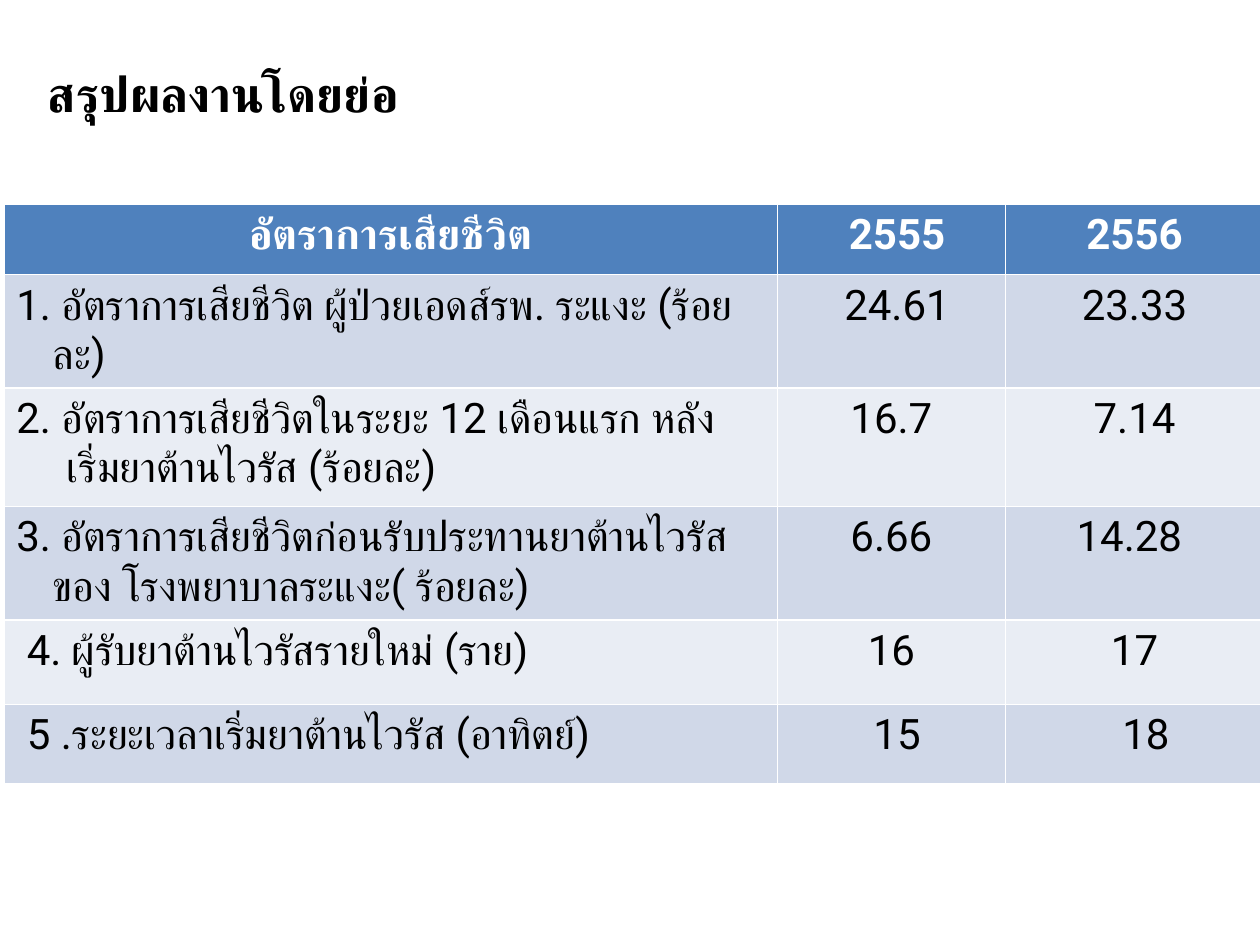
from dataclasses import dataclass

from lxml.etree import SubElement
from pptx import Presentation
from pptx.dml.color import RGBColor
from pptx.enum.text import MSO_ANCHOR, MSO_AUTO_SIZE, PP_ALIGN
from pptx.oxml.ns import qn
from pptx.util import Inches, Pt

COLORS = {
    "header": "4F81BD",
    "odd": "D0D8E8",
    "even": "E9EDF4",
    "light": "FFFFFF",
    "dark": "000000",
}
FONT = "Roboto"
COL_WIDTHS = (6.14, 1.81, 2.05)
MARGIN = 0.1


@dataclass
class Value:
    text: str
    shift: float = 0


@dataclass
class Row:
    label: str
    values: tuple[Value, Value]
    height: float
    hanging: float = 0.29


HEADER = Row("อัตราการเสียชีวิต", (Value("2555", 0.09), Value("2556")), 0.56, 0)
ROWS = (
    Row("1. อัตราการเสียชีวิต ผู้ป่วยเอดส์รพ. ระแงะ (ร้อยละ)",
        (Value("24.61", 0.09), Value("23.33")), 0.62),
    Row("2. อัตราการเสียชีวิตในระยะ 12 เดือนแรก หลังเริ่มยาต้านไวรัส (ร้อยละ)",
        (Value("16.7"), Value("7.14")), 0.94, 0.4),
    Row("3. อัตราการเสียชีวิตก่อนรับประทานยาต้านไวรัส ของ โรงพยาบาลระแงะ( ร้อยละ)",
        (Value("6.66"), Value("14.28 ")), 0.87),
    Row(" 4. ผู้รับยาต้านไวรัสรายใหม่ (ราย)", (Value("16"), Value("17")), 0.67),
    Row(" 5 .ระยะเวลาเริ่มยาต้านไวรัส (อาทิตย์)",
        (Value("15", 0.09), Value("18", 0.18)), 0.63),
)


def add_run(p, text: str, size: int, color: str, bold: bool) -> None:
    r = p.add_run()
    r.text = text
    r.font.size = Pt(size)
    r.font.bold = bold
    r.font.name = FONT
    r.font.color.rgb = RGBColor.from_string(COLORS[color])
    SubElement(r.font._element, qn("a:cs")).set("typeface", FONT)


def fill_cell(cell, text: str, fill: str, align, shift: float = 0, hanging: float = 0) -> None:
    header = fill == "header"
    cell.fill.solid()
    cell.fill.fore_color.rgb = RGBColor.from_string(COLORS[fill])
    cell.margin_left = Inches(MARGIN + shift)
    p = cell.text_frame.paragraphs[0]
    p.alignment = align
    if hanging:
        pPr = p._p.get_or_add_pPr()
        pPr.set("marL", str(Inches(hanging)))
        pPr.set("indent", str(-Inches(hanging)))
    add_run(p, text, 24, "light" if header else "dark", header)


def fill_row(table, index: int, row: Row) -> None:
    fill = "header" if index == 0 else ("even", "odd")[index % 2]
    table.rows[index].height = Inches(row.height)
    align = PP_ALIGN.CENTER if index == 0 else PP_ALIGN.LEFT
    fill_cell(table.cell(index, 0), row.label, fill, align, hanging=row.hanging)
    for col, value in enumerate(row.values, 1):
        fill_cell(table.cell(index, col), value.text, fill, PP_ALIGN.CENTER, value.shift)


def add_title(s, text: str) -> None:
    sp = s.shapes.title
    sp.left, sp.top, sp.width, sp.height = map(Inches, (0.28, 0.45, 4.88, 0.57))
    tf = sp.text_frame
    tf.word_wrap = True
    tf.auto_size = MSO_AUTO_SIZE.SHAPE_TO_FIT_TEXT
    tf.vertical_anchor = MSO_ANCHOR.TOP
    p = tf.paragraphs[0]
    p.alignment = PP_ALIGN.LEFT
    add_run(p, text, 28, "dark", True)


def add_rates_table(s, rows: tuple[Row, ...]) -> None:
    height = sum(row.height for row in rows)
    table = s.shapes.add_table(
        len(rows), len(COL_WIDTHS), Inches(0.03), Inches(1.62),
        Inches(sum(COL_WIDTHS)), Inches(height)).table
    for column, width in zip(table.columns, COL_WIDTHS):
        column.width = Inches(width)
    for index, row in enumerate(rows):
        fill_row(table, index, row)


def main() -> None:
    prs = Presentation()
    prs.slide_width, prs.slide_height = Inches(10), Inches(7.5)
    s = prs.slides.add_slide(prs.slide_layouts[5])
    add_title(s, "สรุปผลงานโดยย่อ")
    add_rates_table(s, (HEADER, *ROWS))
    prs.save("out.pptx")


if __name__ == "__main__":
    main()
